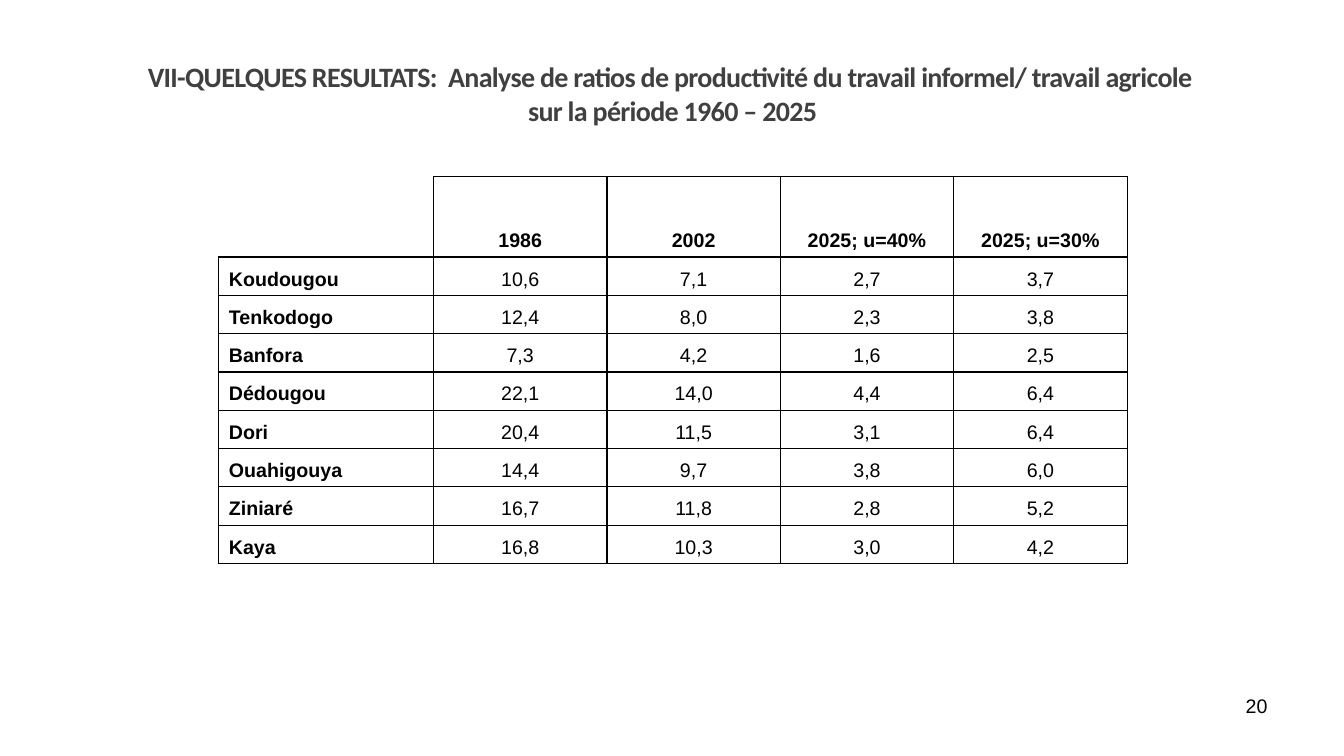
from dataclasses import dataclass

from lxml import etree
from pptx import Presentation
from pptx.dml.color import RGBColor
from pptx.enum.text import MSO_ANCHOR, PP_ALIGN
from pptx.oxml.ns import qn
from pptx.slide import Slide
from pptx.table import _Cell
from pptx.text.text import _Paragraph
from pptx.util import Inches, Pt

LEFT, CENTER, RIGHT = PP_ALIGN.LEFT, PP_ALIGN.CENTER, PP_ALIGN.RIGHT
TOP, MIDDLE, BOTTOM = MSO_ANCHOR.TOP, MSO_ANCHOR.MIDDLE, MSO_ANCHOR.BOTTOM


@dataclass(frozen=True)
class Theme:
    title_font: str = "Calibri"
    body_font: str = "Arial"
    title_color: str = "404040"
    text_color: str = "000000"
    border_color: str = "000000"
    title_size: int = 20
    body_size: int = 14
    border_width: int = 1


@dataclass(frozen=True)
class TownRatios:
    town: str
    ratios: tuple[str, ...]


THEME = Theme()
TITLE = (
    "VII-QUELQUES RESULTATS:  Analyse de ratios de productivité du travail "
    "informel/ travail agricole \vsur la période 1960 – 2025"
)
SCENARIOS = ("1986", "2002", "2025; u=40%", "2025; u=30%")
TOWNS = (
    TownRatios("Koudougou", ("10,6", "7,1", "2,7", "3,7")),
    TownRatios("Tenkodogo", ("12,4", "8,0", "2,3", "3,8")),
    TownRatios("Banfora", ("7,3", "4,2", "1,6", "2,5")),
    TownRatios("Dédougou", ("22,1", "14,0", "4,4", "6,4")),
    TownRatios("Dori", ("20,4", "11,5", "3,1", "6,4")),
    TownRatios("Ouahigouya", ("14,4", "9,7", "3,8", "6,0")),
    TownRatios("Ziniaré", ("16,7", "11,8", "2,8", "5,2")),
    TownRatios("Kaya", ("16,8", "10,3", "3,0", "4,2")),
)


def format_paragraph(paragraph: _Paragraph, alignment: PP_ALIGN, font: str,
                     size: int, color: str, bold: bool = False) -> None:
    paragraph.alignment = alignment
    for run in paragraph.runs:
        for name, value in {"name": font, "size": Pt(size), "bold": bold}.items():
            setattr(run.font, name, value)
        run.font.color.rgb = RGBColor.from_string(color)


def add_title(slide: Slide) -> None:
    title = slide.shapes.title
    position = {"left": Inches(0.67), "top": Inches(0.3),
                "width": Inches(12), "height": Inches(1.25)}
    for name, value in position.items():
        setattr(title, name, value)
    title.text_frame.text = TITLE
    title.text_frame.vertical_anchor = MIDDLE
    paragraph = title.text_frame.paragraphs[0]
    format_paragraph(paragraph, CENTER, THEME.title_font, THEME.title_size,
                     THEME.title_color, True)
    for run in paragraph.runs:
        run.font._element.set("spc", "-50")


def draw_borders(cell: _Cell, visible_sides: str) -> None:
    properties = cell._tc.get_or_add_tcPr()
    for side in "LRTB":
        line = etree.SubElement(properties, qn(f"a:ln{side}"),
                                w=str(Pt(THEME.border_width)))
        if side in visible_sides:
            fill = etree.SubElement(line, qn("a:solidFill"))
            etree.SubElement(fill, qn("a:srgbClr"), val=THEME.border_color)
        else:
            etree.SubElement(line, qn("a:noFill"))


def fill_cell(cell: _Cell, text: str, alignment: PP_ALIGN, bold: bool,
              visible_sides: str) -> None:
    draw_borders(cell, visible_sides)
    cell.fill.background()
    cell.vertical_anchor = BOTTOM
    cell.text = text
    paragraph = cell.text_frame.paragraphs[0]
    format_paragraph(paragraph, alignment, THEME.body_font, THEME.body_size,
                     THEME.text_color, bold)
    indent = Inches(0.38)
    properties = paragraph._p.get_or_add_pPr()
    properties.set("marL", str(indent))
    properties.set("indent", str(-indent))


def add_ratio_table(slide: Slide) -> None:
    rows = [("", *SCENARIOS)] + [(item.town, *item.ratios) for item in TOWNS]
    table = slide.shapes.add_table(
        len(rows), len(rows[0]), Inches(2.17), Inches(1.75), Inches(9), Inches(3.81)
    ).table
    table.first_row = False
    table.horz_banding = False
    for index, column in enumerate(table.columns):
        column.width = Inches(1.72 if index else 2.13)
    for index, row in enumerate(table.rows):
        row.height = Inches(0.38 if index else 0.8)
    for row_index, texts in enumerate(rows):
        for column_index, text in enumerate(texts):
            is_header, is_town = row_index == 0, column_index == 0
            fill_cell(
                table.cell(row_index, column_index), text,
                LEFT if is_town else CENTER, is_header or is_town,
                "RB" if is_header and is_town else "LRTB",
            )


def add_page_number(slide: Slide) -> None:
    box = slide.shapes.add_textbox(Inches(9.56), Inches(6.83), Inches(3.11), Inches(0.52))
    frame = box.text_frame
    frame.word_wrap = True
    frame.vertical_anchor = TOP
    frame.text = "20"
    format_paragraph(frame.paragraphs[0], RIGHT, THEME.body_font,
                     THEME.body_size, THEME.text_color)


def main() -> None:
    presentation = Presentation()
    presentation.slide_width = Inches(13.33)
    presentation.slide_height = Inches(7.5)
    slide = presentation.slides.add_slide(presentation.slide_layouts.get_by_name("Title Only"))
    add_page_number(slide)
    add_title(slide)
    add_ratio_table(slide)
    presentation.save("out.pptx")


if __name__ == "__main__":
    main()
